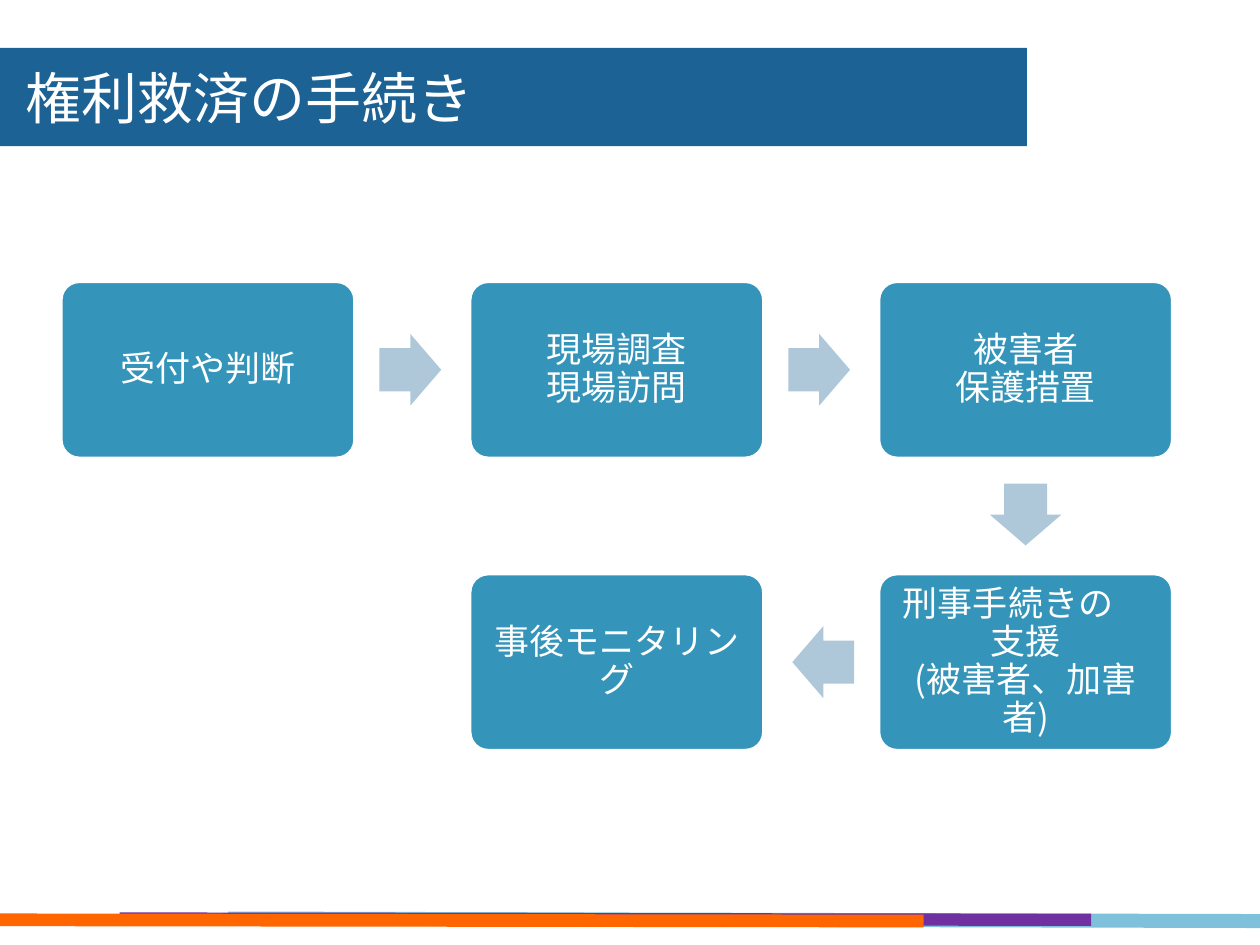
from itertools import pairwise

from lxml import etree
from pptx import Presentation
from pptx.dml.color import RGBColor
from pptx.enum.shapes import MSO_CONNECTOR, MSO_SHAPE
from pptx.enum.text import MSO_ANCHOR, PP_ALIGN
from pptx.oxml.ns import qn
from pptx.util import Inches, Pt

STRAIGHT = MSO_CONNECTOR.STRAIGHT
ROUNDED = MSO_SHAPE.ROUNDED_RECTANGLE
ARROW = MSO_SHAPE.RIGHT_ARROW
MIDDLE = MSO_ANCHOR.MIDDLE
LEFT, CENTER = PP_ALIGN.LEFT, PP_ALIGN.CENTER

FONT = "Noto Sans CJK JP"
WHITE = RGBColor(0xFF, 0xFF, 0xFF)
NAVY = RGBColor(0x1D, 0x62, 0x94)
TEAL = RGBColor(0x34, 0x94, 0xBA)
PALE_BLUE = RGBColor(0xAE, 0xC8, 0xD9)
SKY = RGBColor(0x7F, 0xC1, 0xDB)
PURPLE = RGBColor(0x70, 0x30, 0xA0)
ORANGE = RGBColor(0xFF, 0x66, 0x00)

STEP_SIZE = (2.32, 1.39)
ARROW_SIZE = (0.49, 0.57)
ARROW_POSITION = 0.495
STEPS = [
    ("受付や判断", 0, 0),
    ("現場調査\v現場訪問", 1, 0),
    ("被害者\v保護措置", 2, 0),
    ("刑事手続きの　支援\v(被害者、加害者)", 2, 1),
    ("事後モニタリング", 1, 1),
]
ROTATIONS = {(1, 0): 0, (0, 1): 90, (-1, 0): 180}
STRIPES = [
    (1.81, 7.29, 10, 7.31, SKY, 8),
    (0.95, 7.29, 8.66, 7.3, PURPLE, 7),
    (0, 7.3, 7.33, 7.31, ORANGE, 7.25),
]


def set_attributes(target, values):
    """Set every named value on the target."""
    for name, value in values.items():
        setattr(target, name, value)


def write_text(shape, text, size, frame_format, para_format):
    """Write one white paragraph into a shape."""
    frame = shape.text_frame
    set_attributes(frame, frame_format)
    para = frame.paragraphs[0]
    para.text = text
    set_attributes(para, para_format)
    for span in para.runs:
        set_attributes(span.font, {"size": Pt(size), "name": FONT, "bold": False})
        span.font.color.rgb = WHITE
        east_asian = etree.SubElement(span.font._element, qn("a:ea"))
        east_asian.set("typeface", FONT)


def add_filled_shape(page, kind, box, color):
    """Add a plain filled shape without outline or shadow."""
    shape = page.shapes.add_shape(kind, *map(Inches, box))
    shape.shadow.inherit = False
    shape.fill.solid()
    shape.fill.fore_color.rgb = color
    shape.line.fill.background()
    return shape


def place_title(page, box):
    """Turn the title placeholder into the banner."""
    title = page.shapes.title
    set_attributes(title, dict(zip(("left", "top", "width", "height"), map(Inches, box))))
    title.fill.solid()
    title.fill.fore_color.rgb = NAVY
    frame_format = {
        "vertical_anchor": MIDDLE, "word_wrap": True,
        "margin_left": Inches(0.2), "margin_right": Inches(0.1),
        "margin_top": Inches(0.12), "margin_bottom": Inches(0.12),
    }
    write_text(title, "権利救済の手続き", 32, frame_format, {"alignment": LEFT})


def place_stripes(page):
    """Draw the overlapping coloured lines at the foot."""
    for *ends, color, weight in STRIPES:
        stripe = page.shapes.add_connector(STRAIGHT, *map(Inches, ends))
        stripe.line.color.rgb = color
        stripe.line.width = Pt(weight)
        etree.SubElement(stripe._element.spPr, qn("a:effectLst"))


def place_step(page, text, box):
    """Draw one rounded step with its label."""
    step = add_filled_shape(page, ROUNDED, box, TEAL)
    step.adjustments[0] = 0.1
    step.line.color.rgb = WHITE
    step.line.width = Pt(1)
    sides = ("margin_left", "margin_right", "margin_top", "margin_bottom")
    frame_format = {"vertical_anchor": MIDDLE, "word_wrap": True}
    frame_format |= dict.fromkeys(sides, Inches(0.08))
    write_text(step, text, 20, frame_format, {"alignment": CENTER, "line_spacing": 0.9})


def place_arrow(page, center, rotation):
    """Draw a block arrow around its centre."""
    width, height = ARROW_SIZE
    box = (center[0] - width / 2, center[1] - height / 2, width, height)
    arrow = add_filled_shape(page, ARROW, box, PALE_BLUE)
    arrow.adjustments[0] = 0.6
    arrow.adjustments[1] = 0.5
    arrow.rotation = rotation


def place_flow(page, box):
    """Lay the steps on a grid and link neighbours with arrows."""
    left, top, width, height = box
    step_width, step_height = STEP_SIZE
    pitch_x, pitch_y = (width - step_width) / 2, height - step_height
    for text, column, row in STEPS:
        corner = (left + column * pitch_x, top + row * pitch_y)
        place_step(page, text, (*corner, *STEP_SIZE))
    for (_, column, row), (_, next_column, next_row) in pairwise(STEPS):
        direction = (next_column - column, next_row - row)
        center = (
            left + step_width / 2 + (column + ARROW_POSITION * direction[0]) * pitch_x,
            top + step_height / 2 + (row + ARROW_POSITION * direction[1]) * pitch_y,
        )
        place_arrow(page, center, ROTATIONS[direction])


def main():
    """Build and save the slide."""
    deck = Presentation()
    set_attributes(deck, {"slide_width": Inches(10), "slide_height": Inches(7.5)})
    page = deck.slides.add_slide(deck.slide_layouts.get_by_name("Title Only"))
    place_title(page, (0, 0.38, 8.15, 0.78))
    place_stripes(page)
    place_flow(page, (0.49, 2.24, 8.81, 3.71))
    deck.save("out.pptx")


if __name__ == "__main__":
    main()
